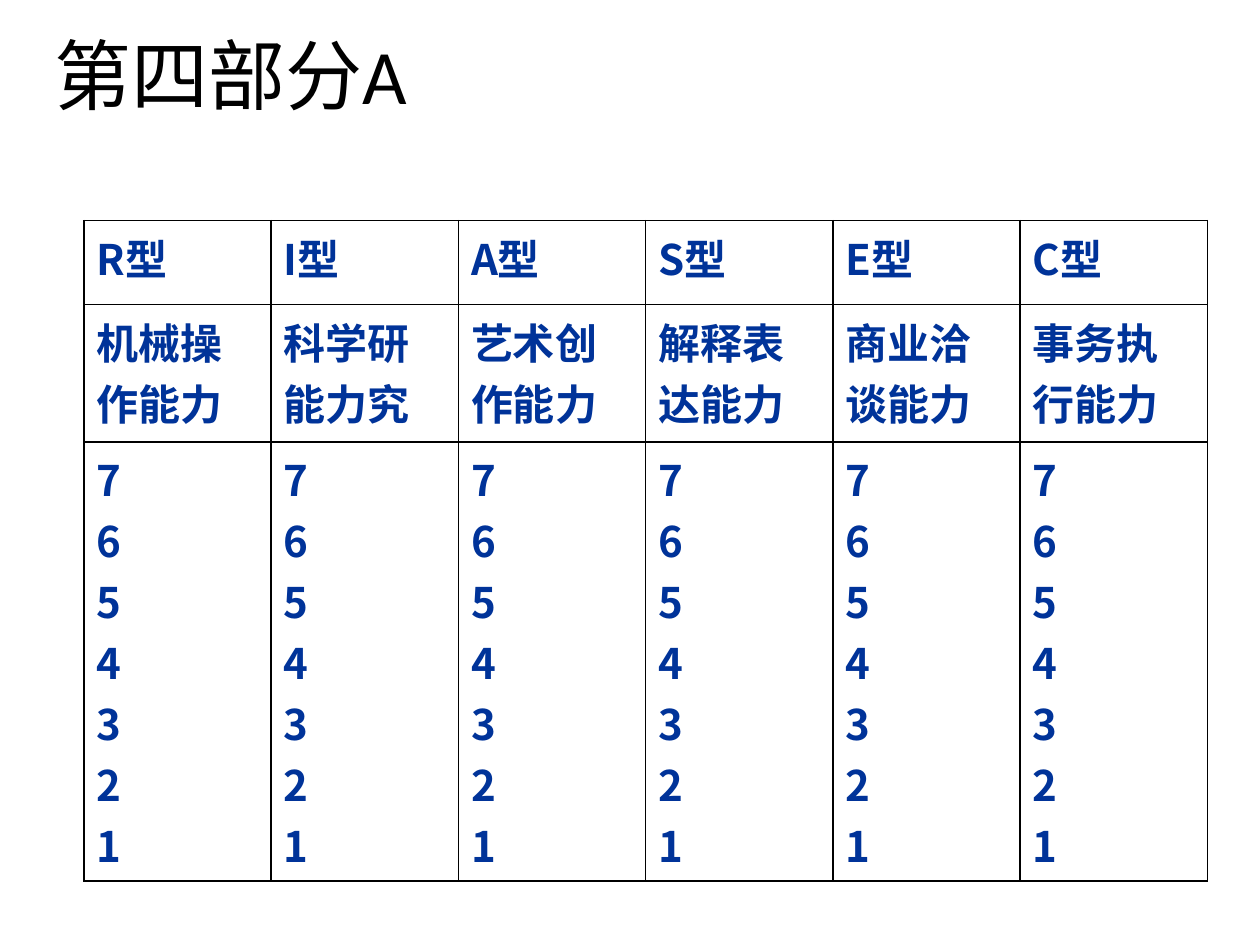
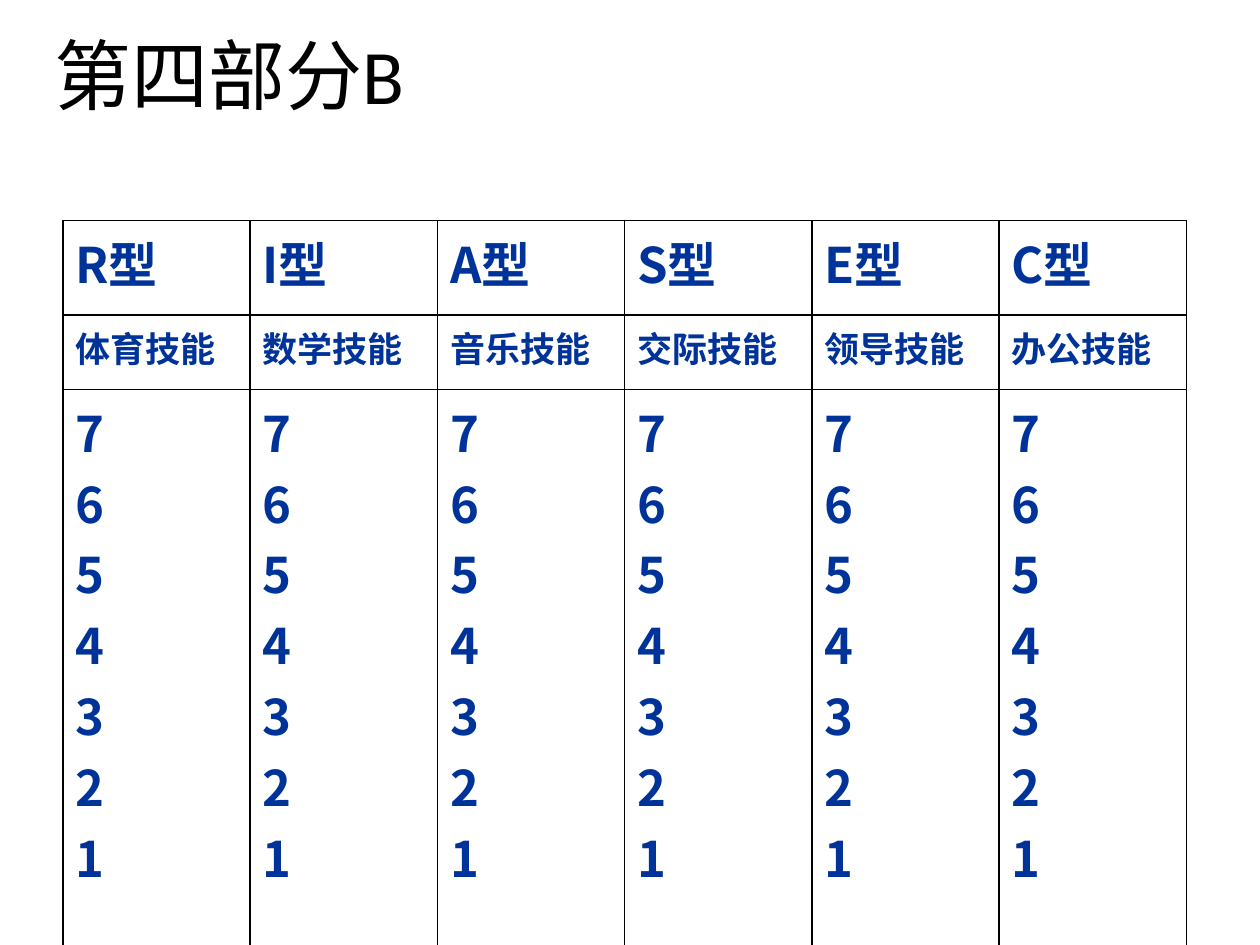
from lxml.etree import SubElement
from pptx import Presentation
from pptx.dml.color import RGBColor
from pptx.enum.text import MSO_ANCHOR, PP_ALIGN
from pptx.oxml.ns import qn
from pptx.util import Pt

COLORS = {"title": "000000", "cell": "003399", "border": "000000"}
TITLE_FONT = "Calibri"
CELL_FONT = "Noto Sans CJK SC"
TITLE_BOX = (24, 18, 672, 90)
TYPES = [f"{letter}型" for letter in "RIASEC"]
SCORES = "\n".join("7654321")
INDENT = 27

ABILITIES = ["机械操\n作能力", "科学研\n能力究", "艺术创\n作能力",
             "解释表\n达能力", "商业洽\n谈能力", "事务执\n行能力"]
SKILLS = ["体育技能", "数学技能", "音乐技能", "交际技能", "领导技能", "办公技能"]


def add_span(para, text, size, font_name, color, bold=False):
    span = para.add_run()
    span.text = text
    span.font.size = Pt(size)
    span.font.name = font_name
    span.font.bold = bold
    span.font.color.rgb = RGBColor.from_string(COLORS[color])
    # East Asian letters take the same CJK face everywhere
    latin = span.font._element.find(qn("a:latin"))
    east_asian = latin.makeelement(qn("a:ea"), {"typeface": CELL_FONT})
    latin.addnext(east_asian)


def add_title(page, text, box):
    title = page.shapes.title
    title.left, title.top, title.width, title.height = map(Pt, box)
    frame = title.text_frame
    frame.word_wrap = True
    frame.vertical_anchor = MSO_ANCHOR.TOP
    para = frame.paragraphs[0]
    para.alignment = PP_ALIGN.LEFT
    para.line_spacing = 0.9
    add_span(para, text, 44, TITLE_FONT, "title")


def draw_borders(cell):
    properties = cell._tc.get_or_add_tcPr()
    for side in ("lnL", "lnR", "lnT", "lnB"):
        line = SubElement(properties, qn(f"a:{side}"), w=str(Pt(1)))
        fill = SubElement(line, qn("a:solidFill"))
        SubElement(fill, qn("a:srgbClr"), val=COLORS["border"])


def fill_cell(cell, text, size):
    draw_borders(cell)
    cell.fill.background()
    cell.vertical_anchor = MSO_ANCHOR.TOP
    frame = cell.text_frame
    for index, line in enumerate(text.split("\n")):
        para = frame.add_paragraph() if index else frame.paragraphs[0]
        properties = para._p.get_or_add_pPr()
        properties.set("marL", str(Pt(INDENT)))
        properties.set("indent", str(-Pt(INDENT)))
        add_span(para, line, size, CELL_FONT, "cell", bold=True)


def add_score_table(page, box, names, heights, sizes, space_below):
    """Type, name and score rows; space_below pads the score row."""
    rows = [TYPES, names, [SCORES] * len(TYPES)]
    left, top, width, height = map(Pt, box)
    table = page.shapes.add_table(len(rows), len(TYPES), left, top, width, height).table
    table.first_row = table.horz_banding = False
    for column in table.columns:
        column.width = width // len(TYPES)
    for row, texts, row_height, size in zip(table.rows, rows, heights, sizes):
        row.height = Pt(row_height)
        for cell, text in zip(row.cells, texts):
            fill_cell(cell, text, size)
    for cell in table.rows[len(rows) - 1].cells:
        cell.margin_bottom = Pt(space_below)


def add_score_page(deck, title, left, names, heights, sizes, space_below=3.6):
    page = deck.slides.add_slide(deck.slide_layouts[5])
    add_title(page, title, TITLE_BOX)
    box = (left, 126, 642, sum(heights))
    add_score_table(page, box, names, heights, sizes, space_below)


def main():
    deck = Presentation()
    deck.slide_width, deck.slide_height = Pt(720), Pt(540)
    add_score_page(deck, "第四部分A", 48, ABILITIES, (48, 78.5, 228), (24, 24, 24))
    add_score_page(deck, "第四部分B", 36, SKILLS, (54, 42.5, 270), (28, 20, 28), space_below=40)
    deck.save("out.pptx")


if __name__ == "__main__":
    main()
